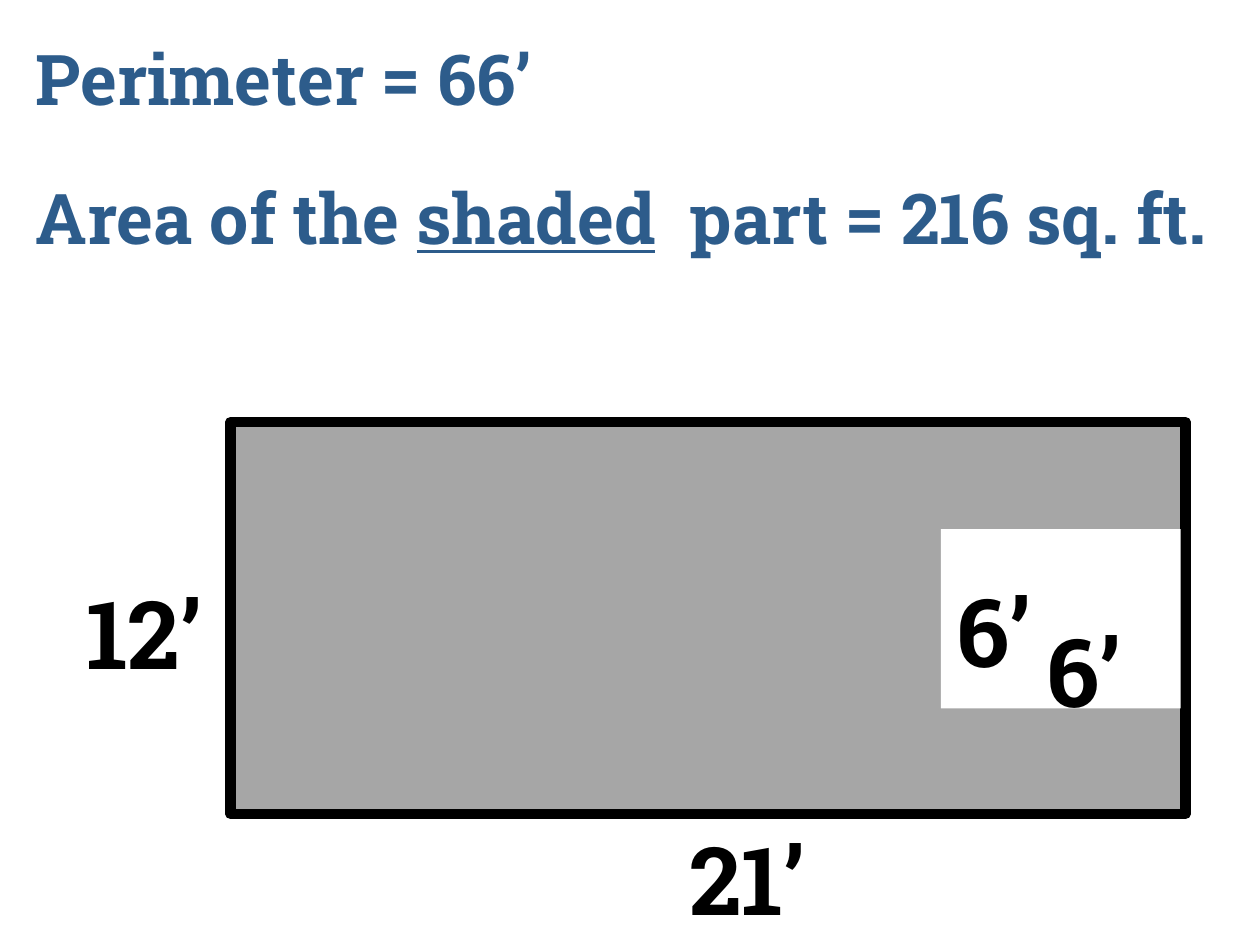
from pptx import Presentation
from pptx import util as u
from pptx.dml.color import RGBColor
from pptx.enum import shapes, text

BLUE = RGBColor(0x2D, 0x5C, 0x8B)
BLACK = RGBColor(0, 0, 0)
WHITE = RGBColor(0xFF, 0xFF, 0xFF)
GRAY = RGBColor(0xA6, 0xA6, 0xA6)
FONT = "Roboto Slab"


def style_font(font, size, color):
    """Apply the bold slab face in the given size and colour."""
    font.name = FONT
    font.size = u.Pt(size)
    font.bold = True
    font.color.rgb = color


def add_rectangle(group, left, top, width, height, fill, border=0):
    """Add a filled rectangle in centimetres, with an optional black border."""
    shape = group.shapes.add_shape(
        shapes.MSO_SHAPE.RECTANGLE,
        u.Cm(left), u.Cm(top), u.Cm(width), u.Cm(height))
    shape.shadow.inherit = False
    shape.fill.solid()
    shape.fill.fore_color.rgb = fill
    if border:
        shape.line.color.rgb = BLACK
        shape.line.width = u.Pt(border)
    else:
        shape.line.fill.background()


def add_length(group, label, left, top, width):
    """Add a centred side length in centimetres."""
    shape = group.shapes.add_textbox(
        u.Cm(left), u.Cm(top), u.Cm(width), u.Cm(2.08))
    frame = shape.text_frame
    frame.word_wrap = True
    frame.auto_size = text.MSO_AUTO_SIZE.SHAPE_TO_FIT_TEXT
    paragraph = frame.paragraphs[0]
    paragraph.text = label
    paragraph.alignment = text.PP_ALIGN.CENTER
    style_font(paragraph.font, 54, BLACK)


def fill_answers(title):
    """Place the title and write the perimeter and area lines."""
    title.left, title.top = u.Cm(0.46), u.Cm(0.79)
    title.width, title.height = u.Cm(25.25), u.Cm(7.57)
    frame = title.text_frame
    frame.word_wrap = True
    frame.auto_size = text.MSO_AUTO_SIZE.NONE
    frame.vertical_anchor = text.MSO_ANCHOR.TOP
    perimeter, area = frame.paragraphs[0], frame.add_paragraph()
    perimeter.text = "Perimeter = 66’"
    for part in ("Area of the ", "shaded", "  part = 216 sq. ft."):
        run = area.add_run()
        run.text = part
        if part == "shaded":
            run.font.underline = True
    for paragraph in (perimeter, area):
        paragraph.alignment = text.PP_ALIGN.LEFT
        paragraph.line_spacing = 0.9
        style_font(paragraph.font, 40, BLUE)
    perimeter.space_after = u.Pt(36)


def add_figure(slide):
    """Draw the shaded rectangle, its cut-out and the side lengths."""
    group = slide.shapes.add_group_shape()
    add_rectangle(group, 4.65, 8.51, 19.25, 7.9, GRAY, border=6)
    add_length(group, "12’", 1.14, 11.46, 3.53)
    add_length(group, "21’", 13.23, 16.43, 3.68)
    add_rectangle(group, 18.97, 10.67, 4.83, 3.61, WHITE)
    add_length(group, "6’", 18.67, 11.43, 2.72)
    add_length(group, "6’", 20.32, 12.24, 3.05)


def main():
    """Build and save the slide."""
    presentation = Presentation()
    presentation.slide_width, presentation.slide_height = u.Cm(25.4), u.Cm(19.05)
    slide = presentation.slides.add_slide(presentation.slide_layouts[5])
    fill_answers(slide.shapes.title)
    add_figure(slide)
    presentation.save("out.pptx")


if __name__ == "__main__":
    main()
